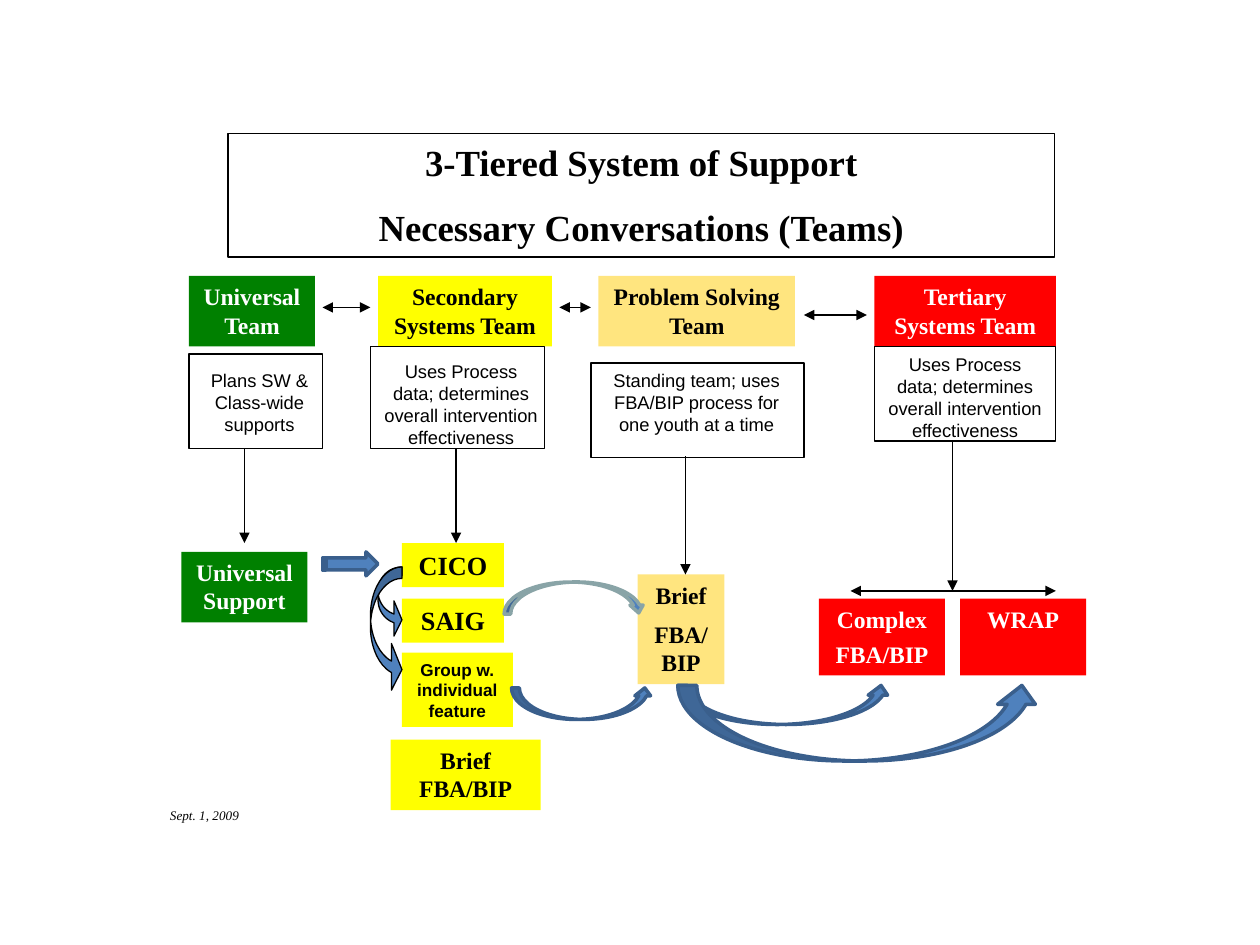
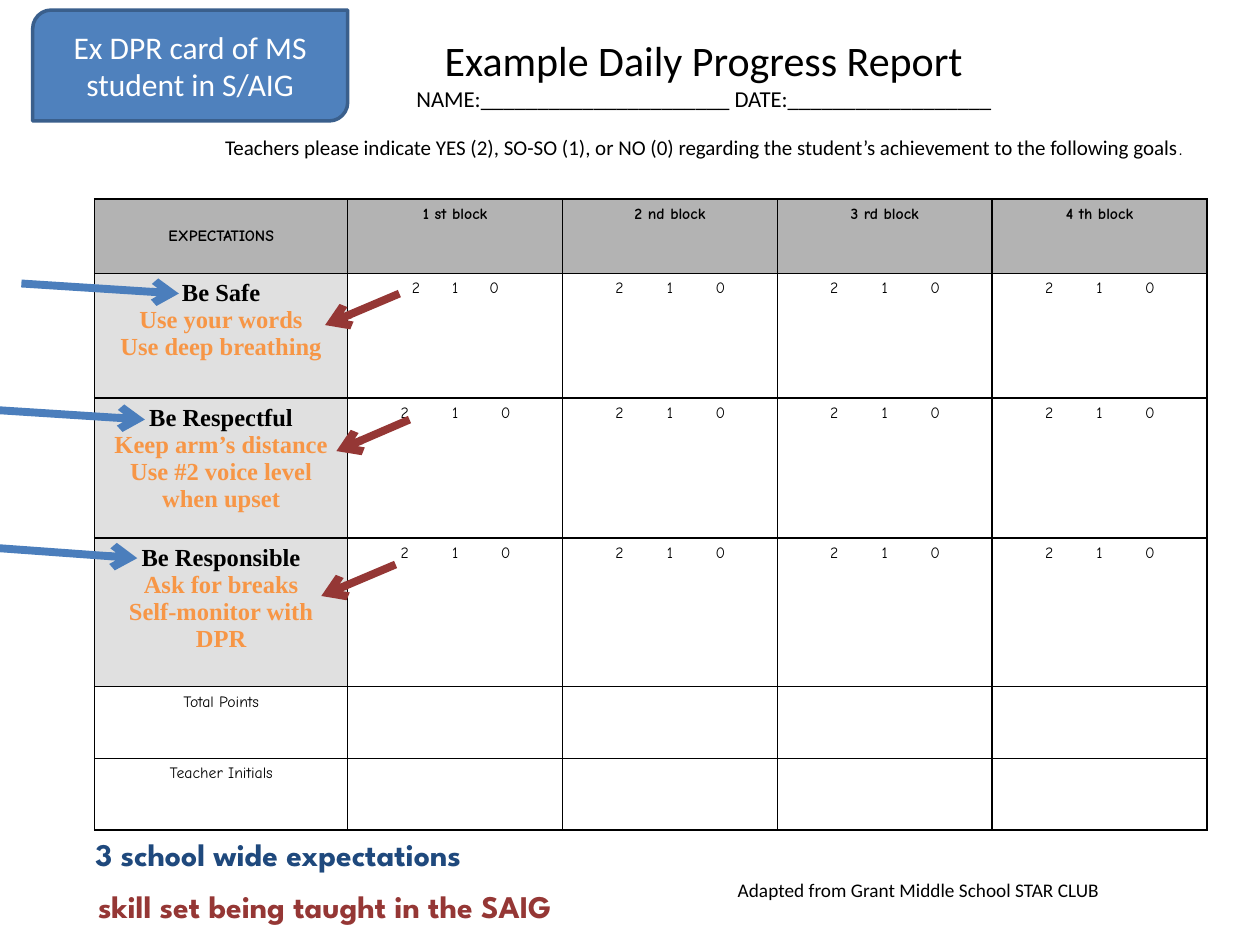
"""Builds two slides: the three-tier team map and a daily progress report card."""
from lxml.etree import SubElement
from pptx import Presentation
from pptx.dml.color import RGBColor
from pptx.enum.shapes import MSO_CONNECTOR as Link, MSO_SHAPE as Kind
from pptx.enum.text import MSO_ANCHOR as Anchor, PP_ALIGN as Align
from pptx.oxml.ns import qn
from pptx.util import Inches, Pt

BLACK = RGBColor(0, 0, 0)
WHITE = RGBColor(255, 255, 255)
GREEN = RGBColor(0, 128, 0)
YELLOW = RGBColor(255, 255, 0)
GOLD = RGBColor(255, 204, 0)
RED = RGBColor(255, 0, 0)
BLUE = RGBColor(0x4F, 0x81, 0xBD)
EDGE = RGBColor(0x3A, 0x5F, 0x8C)
SAGE = RGBColor(0x89, 0xA4, 0xA7)
ARROW = RGBColor(0x4B, 0x7E, 0xBC)
NAVY = RGBColor(0x1F, 0x49, 0x7D)
MAROON = RGBColor(0x95, 0x37, 0x35)
ORANGE = RGBColor(0xF7, 0x96, 0x46)
GRAY = RGBColor(0xB3, 0xB3, 0xB3)
PALE = RGBColor(0xE0, 0xE0, 0xE0)
SERIF, SANS, BODY = "Times New Roman", "Arial", "Calibri"
COMIC, BOLD = "Comic Neue", "League Spartan"

TITLE = "3-Tiered System of Support\nNecessary Conversations (Teams)"
TIERS = [
    ("Universal Team", (1.5, 2.19, 1, 0.56), GREEN, WHITE, 13.5, 0),
    ("Secondary Systems Team", (3, 2.19, 1.38, 0.56), YELLOW, BLACK, 13.5, 0),
    ("Problem Solving Team", (4.75, 2.19, 1.56, 0.56), GOLD, BLACK, 13.5, 0),
    ("Tertiary Systems Team", (6.94, 2.19, 1.44, 0.56), RED, WHITE, 13.5, 0),
    ("Universal Support", (1.44, 4.38, 1, 0.56), GREEN, WHITE, 13.5, 0),
    ("CICO", (3.19, 4.31, 0.81, 0.35), YELLOW, BLACK, 15, 0),
    ("SAIG", (3.19, 4.75, 0.81, 0.35), YELLOW, BLACK, 15, 0),
    ("Brief FBA/BIP", (3.1, 5.87, 1.19, 0.56), YELLOW, BLACK, 13.5, 0),
    ("Brief\nFBA/BIP", (5.06, 4.56, 0.69, 0.87), GOLD, BLACK, 13.5, 6),
    ("Complex\nFBA/BIP", (6.5, 4.75, 1, 0.61), RED, WHITE, 13.5, 4),
    ("WRAP", (7.62, 4.75, 1, 0.61), RED, WHITE, 13.5, 0),
]
GROUP = "Group w. individual\nfeature"
USES = "Uses Process data; determines overall intervention effectiveness"
ROLES = [
    ("Plans SW & Class-wide supports", (1.56, 2.88, 1, 0.63), (1.5, 2.81, 1.06, 0.75)),
    (USES, (2.94, 2.81, 1.44, 0.81), (2.94, 2.75, 1.38, 0.81)),
    ("Standing team; uses FBA/BIP process for one youth at a time",
     (4.75, 2.88, 1.56, 0.63), (4.69, 2.88, 1.69, 0.75)),
    (USES, (6.94, 2.75, 1.44, 0.81), (6.94, 2.75, 1.44, 0.75)),
]
DROPS = [(1.94, 3.56, 4.31), (3.62, 3.56, 4.31), (5.44, 3.62, 4.56), (7.56, 3.5, 4.69)]
SPANS = [(2.56, 2.94, 2.44), (4.44, 4.69, 2.44), (6.38, 6.88, 2.5), (6.75, 8.38, 4.69)]
HOOK = [0.363, 1.482, 0.333]
CURVES = [
    (Kind.CURVED_RIGHT_ARROW, (3, 4.5, 0.19, 0.56), BLACK, 0.75, HOOK),
    (Kind.CURVED_RIGHT_ARROW, (2.94, 4.5, 0.25, 1), BLACK, 0.75, HOOK),
    (Kind.STRIPED_RIGHT_ARROW, (2.56, 4.38, 0.44, 0.19), EDGE, 2, []),
    (Kind.CURVED_UP_ARROW, (5.38, 5.44, 1.69, 0.31), EDGE, 2, []),
    (Kind.CURVED_UP_ARROW, (5.38, 5.44, 2.88, 0.6), EDGE, 2, []),
    (Kind.CURVED_UP_ARROW, (4.06, 5.46, 1.12, 0.25), EDGE, 2, []),
]
ARCH = (Kind.CURVED_UP_ARROW, (4, 4.62, 1.12, 0.25), SAGE, 2, [0.208, 0.417, 0.25])

HEAD = [
    ("Example Daily Progress Report", 24, 0),
    ("NAME:______________________ DATE:__________________", 13, 0),
    ("Teachers please indicate YES (2), SO-SO (1), or NO (0) regarding "
     "the student’s achievement to the following goals", 12, 12.8),
]
BLOCKS = ["EXPECTATIONS", "1 st block", "2 nd block", "3 rd block", "4 th block"]
GOALS = [
    "Be Safe\nUse your words\nUse deep breathing",
    "Be Respectful\nKeep arm’s distance\nUse #2 voice level when upset",
    "Be Responsible\nAsk for breaks\nSelf-monitor with DPR",
]
SUMS = ["Total Points", "Teacher Initials"]
SCORE = "\t2\t1\t0"
WIDTHS = [2.01] + [1.705] * 4
HEIGHTS = [0.59, 0.99, 1.11, 1.18, 0.57, 0.57]
POINTERS = [
    ((0.17, 2.25), (1.42, 2.33), ARROW), ((-0.1, 3.25), (1.15, 3.33), ARROW),
    ((-0.16, 4.34), (1.09, 4.43), ARROW), ((3.17, 2.33), (2.58, 2.58), MAROON),
    ((3.25, 3.33), (2.67, 3.58), MAROON), ((3.14, 4.48), (2.55, 4.73), MAROON),
]
KEYS = [
    ("3 school wide expectations", (0.66, 6.58, 3.57, 0.4), NAVY),
    ("skill set being taught in the SAIG", (0.68, 6.99, 4.16, 0.4), MAROON),
]


def style(para, size, face, color=BLACK, bold=False):
    """Set the font of a paragraph."""
    font = para.font
    font.size, font.name, font.bold = Pt(size), face, bold
    font.color.rgb = color


def write(frame, text, size, face, color=BLACK, bold=False, gap=0, align=Align.CENTER):
    """Write lines of text as paragraphs of one style."""
    frame.text = text
    for i, para in enumerate(frame.paragraphs):
        para.alignment = align
        if i and gap:
            para.space_before = Pt(gap)
        style(para, size, face, color, bold)


def label(slide, at, wrap=True):
    """Add an empty text box and return its frame."""
    frame = slide.shapes.add_textbox(*map(Inches, at)).text_frame
    frame.word_wrap = wrap
    return frame


def draw(slide, kind, at, fill=None, edge=None, width=0.75):
    """Add a flat shape."""
    shape = slide.shapes.add_shape(kind, *map(Inches, at))
    shape.shadow.inherit = False
    if fill is None:
        shape.fill.background()
    else:
        shape.fill.solid()
        shape.fill.fore_color.rgb = fill
    if edge is None:
        shape.line.fill.background()
    else:
        shape.line.color.rgb = edge
        shape.line.width = Pt(width)
    shape.text_frame.word_wrap = True
    shape.text_frame.vertical_anchor = Anchor.TOP
    return shape


def join(slide, start, end, color=BLACK, width=0.75, tip="triangle", both=False):
    """Add an arrow between two points."""
    line = slide.shapes.add_connector(Link.STRAIGHT, *map(Inches, start + end))
    line.line.color.rgb = color
    line.line.width = Pt(width)
    props = line.element.spPr
    for name in ["a:headEnd", "a:tailEnd"] if both else ["a:tailEnd"]:
        SubElement(props.find(qn("a:ln")), qn(name), type=tip)
    SubElement(props, qn("a:effectLst"))


def curve(slide, kind, at, edge, width, bends):
    """Add a block arrow with its bends."""
    shape = draw(slide, kind, at, BLUE, edge, width)
    for i, bend in enumerate(bends):
        shape.adjustments[i] = bend
    return shape


def teams(slide):
    """Draw the team map."""
    box = draw(slide, Kind.RECTANGLE, (1.81, 1.06, 6.56, 0.98), None, BLACK)
    write(box.text_frame, TITLE, 21, SERIF, bold=True, gap=12)
    for text, at, fill, color, size, gap in TIERS:
        box = draw(slide, Kind.RECTANGLE, at, fill)
        if fill == GOLD:
            tint = box.fill._xPr.find(qn("a:solidFill"))[0]
            SubElement(tint, qn("a:alpha"), val="50000")
        write(box.text_frame, text, size, SERIF, color, True, gap)
    box = draw(slide, Kind.RECTANGLE, (3.19, 5.18, 0.88, 0.59), YELLOW)
    write(box.text_frame, GROUP, 9.8, SANS, bold=True)
    for x, top, end in DROPS:
        join(slide, (x, top), (x, end))
    for left, right, y in SPANS:
        join(slide, (left, y), (right, y), both=True)
    for text, at, rim in ROLES:
        write(label(slide, at), text, 10.5, SANS)
        draw(slide, Kind.RECTANGLE, rim, None, BLACK)
    for item in CURVES:
        curve(slide, *item)
    arch = curve(slide, *ARCH)
    arch.rotation = 359.5
    arch.element.spPr.find(qn("a:xfrm")).set("flipV", "1")
    date = label(slide, (1.25, 6.36, 0.88, 0.23))
    write(date, "Sept. 1, 2009", 7.5, SERIF, align=Align.LEFT)
    date.paragraphs[0].font.italic = True


def rule(cell, fill):
    """Give a cell black borders and a fill."""
    props = cell._tc.get_or_add_tcPr()
    for side in ("a:lnL", "a:lnR", "a:lnT", "a:lnB"):
        solid = SubElement(SubElement(props, qn(side), w="12700"), qn("a:solidFill"))
        SubElement(solid, qn("a:srgbClr"), val=str(BLACK))
    if fill is None:
        cell.fill.background()
    else:
        cell.fill.solid()
        cell.fill.fore_color.rgb = fill


def score(cell, step):
    """Write the points of a cell on centred tab stops."""
    para = cell.text_frame.paragraphs[0]
    stops = SubElement(para._p.get_or_add_pPr(), qn("a:tabLst"))
    for i in (-1, 0, 1):
        spot = Inches(WIDTHS[1] / 2 - 0.1 + i * step)
        SubElement(stops, qn("a:tab"), pos=str(spot), algn="ctr")
    para.add_run().text = SCORE
    style(para, 9, COMIC)


def grid(slide):
    """Draw the report table."""
    size = map(Inches, (0.75, 1.58, sum(WIDTHS), sum(HEIGHTS)))
    table = slide.shapes.add_table(len(HEIGHTS), len(WIDTHS), *size).table
    table.first_row = table.horz_banding = False
    for col, width in zip(table.columns, WIDTHS):
        col.width = Inches(width)
    for row, height in zip(table.rows, HEIGHTS):
        row.height = Inches(height)
    names = BLOCKS[:1] + GOALS + SUMS
    for r, name in enumerate(names):
        goal = name in GOALS
        for c, block in enumerate(BLOCKS):
            cell = table.cell(r, c)
            rule(cell, GRAY if r == 0 else PALE if goal and c == 0 else None)
            if r == 0:
                write(cell.text_frame, block, 9, COMIC, bold=True)
            elif goal and c == 0:
                write(cell.text_frame, name, 14, SERIF, ORANGE, True)
                cell.text_frame.paragraphs[0].font.color.rgb = BLACK
            elif goal:
                score(cell, 0.31 if r == c == 1 else 0.4)
            elif c == 0:
                write(cell.text_frame, name, 9, COMIC)
    table.cell(0, 0).vertical_anchor = Anchor.MIDDLE


def report(slide):
    """Draw the report card."""
    frame = label(slide, (1.42, 0.21, 8.33, 1.12))
    frame.vertical_anchor = Anchor.MIDDLE
    frame.text = "\n".join(text for text, *_ in HEAD)
    for para, (_, size, gap) in zip(frame.paragraphs, HEAD):
        para.alignment = Align.CENTER
        if gap:
            para.space_before = Pt(gap)
        style(para, size, BODY)
    dot = frame.paragraphs[-1].add_run()
    dot.text, dot.font.name = ".", COMIC
    grid(slide)
    write(label(slide, (4.83, 6.92, 4.92, 0.28)),
          "Adapted from Grant Middle School STAR CLUB", 11, BODY)
    card = draw(slide, Kind.ROUND_2_DIAG_RECTANGLE, (0.26, 0.08, 2.5, 0.88), BLUE, EDGE, 2)
    card.text_frame.vertical_anchor = Anchor.MIDDLE
    write(card.text_frame, "Ex DPR card of MS student in S/AIG", 18, BODY, WHITE)
    for start, end, color in POINTERS:
        join(slide, start, end, color, 4.5, "arrow")
    for text, at, color in KEYS:
        write(label(slide, at, False), text, 18, BOLD, color, True, align=Align.LEFT)


def main():
    """Build and save the slides."""
    deck = Presentation()
    deck.slide_width, deck.slide_height = Inches(10), Inches(7.5)
    for build in (teams, report):
        build(deck.slides.add_slide(deck.slide_layouts[6]))
    deck.save("out.pptx")


if __name__ == "__main__":
    main()
